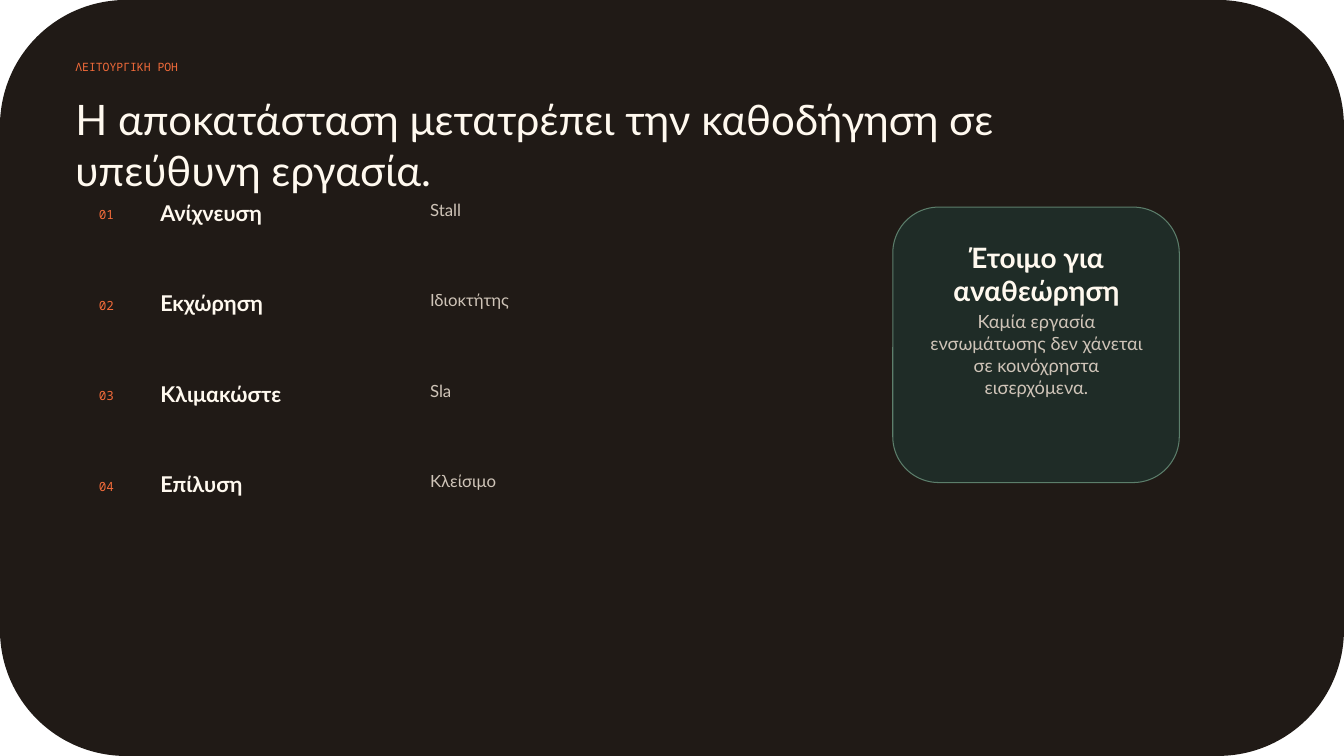
import pptx
import pptx.dml.color
import pptx.enum.shapes
import pptx.enum.text
import pptx.util
from pptx.util import Cm

SANS, MONO = "Lato", "Noto Sans Mono"
INK, CREAM, SAND, ORANGE = "201A16", "FFF9EF", "CFC4B8", "F26B3A"
PINE, SAGE = "1F2C27", "5C7E6B"
ROW_PITCH = 2.28
STEPS = [
    ("Ανίχνευση", "Stall"),
    ("Εκχώρηση", "Ιδιοκτήτης"),
    ("Κλιμακώστε", "Sla"),
    ("Επίλυση", "Κλείσιμο"),
]


def colour(value):
    return pptx.dml.color.RGBColor.from_string(value)


class SlideBuilder:
    def __init__(self, deck):
        self.slide = deck.slides.add_slide(deck.slide_layouts[5])

    def fill_frame(self, frame, words, size, shade, font=SANS, bold=False, centred=False):
        """Fill a text frame with one styled run, without insets."""
        frame.margin_left = frame.margin_right = 0
        frame.margin_top = frame.margin_bottom = 0
        frame.word_wrap = True
        frame.auto_size = pptx.enum.text.MSO_AUTO_SIZE.NONE
        frame.vertical_anchor = pptx.enum.text.MSO_ANCHOR.TOP
        paragraph = frame.paragraphs[0]
        align = pptx.enum.text.PP_ALIGN
        paragraph.alignment = align.CENTER if centred else align.LEFT
        run = paragraph.add_run()
        run.text = words
        run.font.size = pptx.util.Pt(size)
        run.font.name = font
        run.font.bold = bold
        run.font.color.rgb = colour(shade)

    def title(self, left, top, width, height, words, size, shade):
        heading = self.slide.shapes.title
        heading.left, heading.top = Cm(left), Cm(top)
        heading.width, heading.height = Cm(width), Cm(height)
        self.fill_frame(heading.text_frame, words, size, shade)

    def text(self, left, top, width, height, words, size, shade, **style):
        box = self.slide.shapes.add_textbox(Cm(left), Cm(top), Cm(width), Cm(height))
        self.fill_frame(box.text_frame, words, size, shade, **style)

    def panel(self, left, top, width, height, fill, outline=None):
        panel = self.slide.shapes.add_shape(
            pptx.enum.shapes.MSO_SHAPE.ROUNDED_RECTANGLE,
            Cm(left), Cm(top), Cm(width), Cm(height))
        panel.shadow.inherit = False
        panel.fill.solid()
        panel.fill.fore_color.rgb = colour(fill)
        if outline:
            panel.line.color.rgb = colour(outline)
            panel.line.width = pptx.util.Pt(0.75)
        else:
            panel.line.fill.background()
        return panel

    def backdrop(self, width, height, fill):
        """Place a full-size panel behind everything, the title included."""
        panel = self.panel(0, 0, width, height, fill)
        self.slide.shapes.title._element.addprevious(panel._element)


def main():
    deck = pptx.Presentation()
    deck.slide_width, deck.slide_height = Cm(33.87), Cm(19.05)
    page = SlideBuilder(deck)

    page.backdrop(33.87, 19.05, INK)
    page.text(1.9, 1.52, 11.66, 0.71, "ΛΕΙΤΟΥΡΓΙΚΗ ΡΟΗ", 8.2, ORANGE, font=MONO)
    page.title(1.9, 2.36, 23.9, 1.8,
               "Η αποκατάσταση μετατρέπει την καθοδήγηση σε υπεύθυνη εργασία.",
               30, CREAM)

    for index, (step, detail) in enumerate(STEPS):
        top = 5.03 + index * ROW_PITCH
        page.text(2.49, top + 0.19, 1.4, 0.61, f"{index + 1:02}", 9, ORANGE, font=MONO)
        page.text(4.04, top, 7.21, 0.71, step, 15.5, CREAM, bold=True)
        page.text(10.84, top, 10, 0.79, detail, 12, SAND)

    page.panel(22.5, 5.22, 7.22, 6.94, PINE, SAGE)
    page.text(23.2, 6.05, 5.84, 1.17, "Έτοιμο για αναθεώρηση", 20, CREAM,
              bold=True, centred=True)
    page.text(23.2, 7.82, 5.84, 2.49,
              "Καμία εργασία ενσωμάτωσης δεν χάνεται σε κοινόχρηστα εισερχόμενα.",
              13, SAND, centred=True)

    deck.save("out.pptx")


if __name__ == "__main__":
    main()
